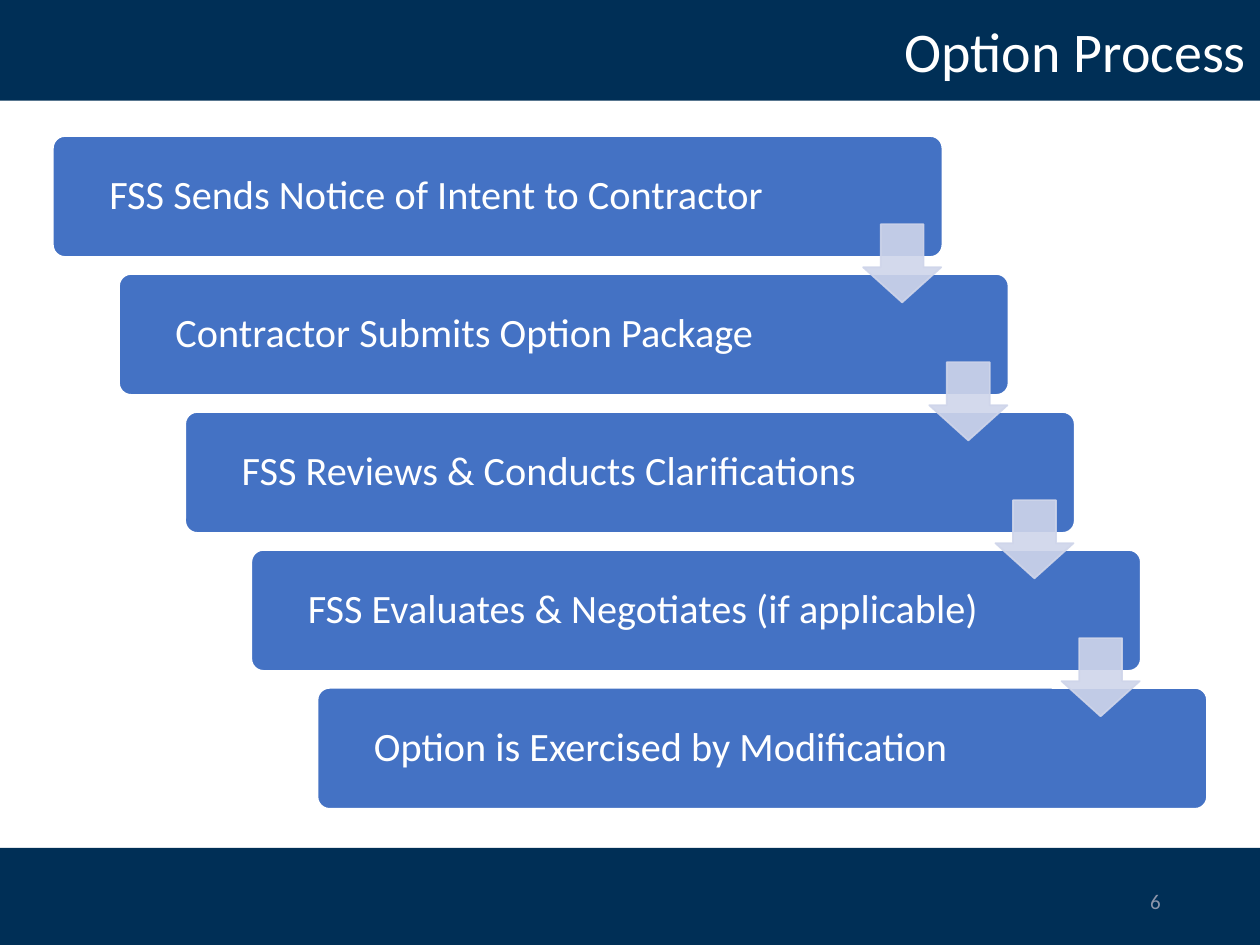
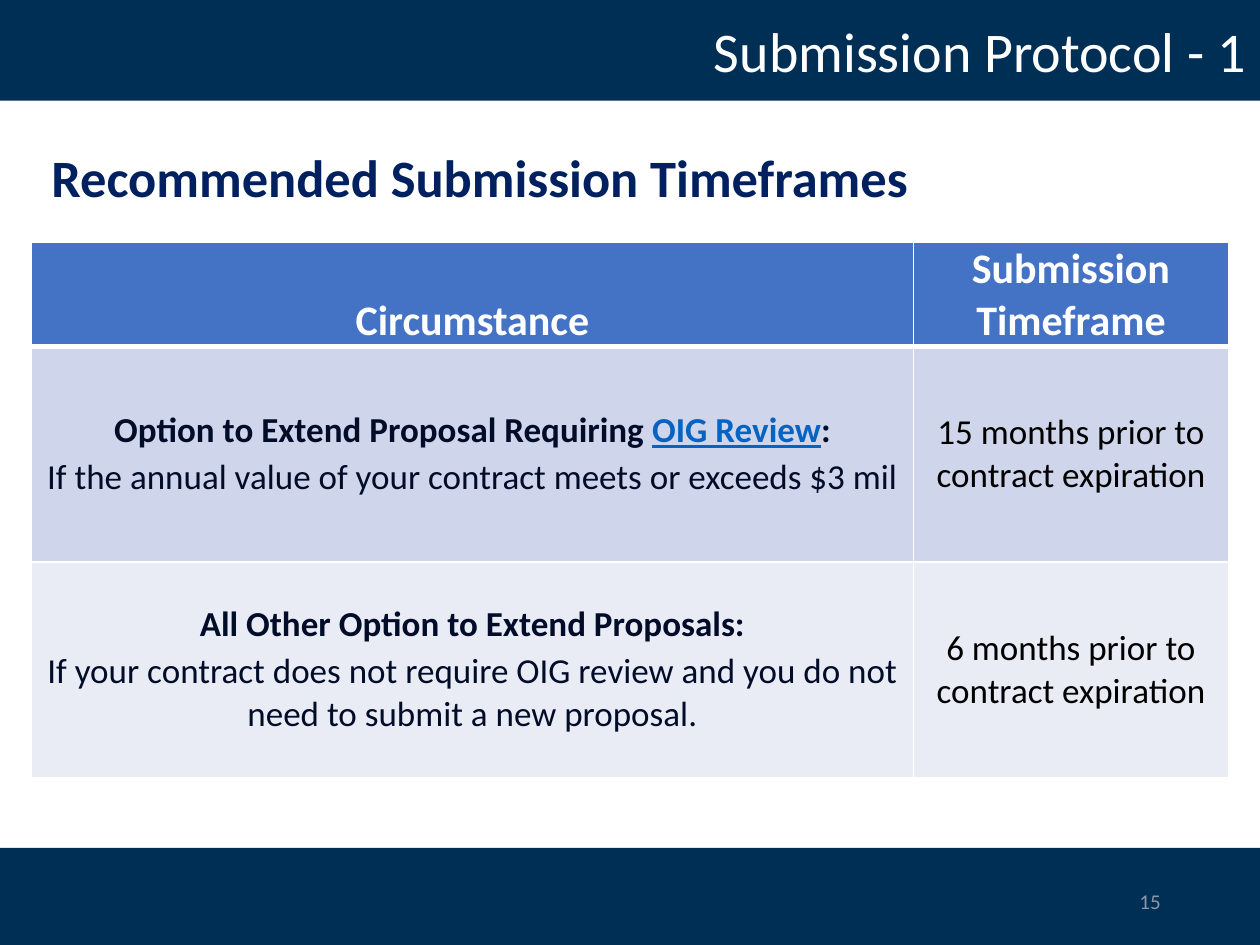
from lxml.etree import SubElement
from pptx import Presentation
from pptx.dml.color import RGBColor
from pptx.enum.shapes import MSO_SHAPE
from pptx.enum.text import MSO_ANCHOR, PP_ALIGN
from pptx.oxml import parse_xml
from pptx.oxml.ns import nsdecls, qn
from pptx.util import Inches, Pt

COLORS = {
    "band": "002F56", "white": "FFFFFF", "number": "8D95AA", "blue": "4472C4",
    "arrow": "CFD5EA", "row_dark": "CFD5EA", "row_light": "E9EBF5",
    "heading": "002060", "body": "010C29", "black": "000000", "link": "0563C1",
}
FONT = "Calibri"
TITLE = {"size": Pt(32)}
NUMBER = {"size": Pt(12)}
STEP = {"size": Pt(23)}
HEADING = {"size": Pt(30), "bold": True}
HEADER = {"size": Pt(24), "bold": True}
BODY = {"size": Pt(20), "bold": False}
LABEL = {"size": Pt(20), "bold": True}
LINK = {"size": Pt(20), "bold": True, "underline": True}

STEPS = [
    "FSS Sends Notice of Intent to Contractor",
    "Contractor Submits Option Package",
    "FSS Reviews & Conducts Clarifications",
    "FSS Evaluates & Negotiates (if applicable)",
    "Option is Exercised by Modification",
]
# Each cell is a list of paragraphs, each paragraph a list of (text, format, color)
TIMEFRAMES = [
    [[[("Circumstance", HEADER, "white")]],
     [[("Submission Timeframe", HEADER, "white")]]],
    [[[("Option to Extend Proposal Requiring ", LABEL, "body"),
       ("OIG Review", LINK, "link"), (":", LABEL, "body")],
      [("If the annual value of your contract meets or exceeds $3 mil",
        BODY, "body")]],
     [[("15 months prior to contract expiration", BODY, "black")]]],
    [[[("All Other Option to Extend Proposals:", LABEL, "body")],
      [("If your contract does not require OIG review and you do not "
        "need to submit a new proposal.", BODY, "body")]],
     [[("6 months prior to contract expiration", BODY, "black")]]],
]


def rgb(name):
    return RGBColor.from_string(COLORS[name])


def set_attrs(obj, values):
    for name, value in values.items():
        setattr(obj, name, value)


def add_run(p, text, fmt, color):
    r = p.add_run()
    r.text = text
    set_attrs(r.font, {"name": FONT, **fmt})
    r.font.color.rgb = rgb(color)


def write_line(tf, text, fmt, color, align=PP_ALIGN.LEFT, spacing=0.9):
    p = tf.paragraphs[0]
    set_attrs(p, {"alignment": align, "line_spacing": spacing})
    add_run(p, text, fmt, color)


def add_text(slide, box, text, fmt, color, anchor=MSO_ANCHOR.MIDDLE, **layout):
    tf = slide.shapes.add_textbox(*map(Inches, box)).text_frame
    set_attrs(tf, {"word_wrap": True, "vertical_anchor": anchor})
    write_line(tf, text, fmt, color, **layout)


def add_box(slide, kind, box, fill, line=None):
    sp = slide.shapes.add_shape(kind, *map(Inches, box))
    sp.shadow.inherit = False
    sp.fill.solid()
    sp.fill.fore_color.rgb = rgb(fill)
    if line:
        sp.line.color.rgb = rgb(line)
        sp.line.width = Pt(1)
    else:
        sp.line.fill.background()
    return sp


def add_slide(prs, title, number):
    """Add a blank slide with the shared bands, title and slide number."""
    slide = prs.slides.add_slide(prs.slide_layouts[6])
    for top in (6.73, 0):
        add_box(slide, MSO_SHAPE.RECTANGLE, (0, top, 10, 0.8), "band")
    add_text(slide, (2.58, 0.05, 7.41, 0.77), title, TITLE, "white",
             align=PP_ALIGN.RIGHT)
    add_text(slide, (7.06, 6.95, 2.25, 0.4), str(number), NUMBER, "number",
             align=PP_ALIGN.RIGHT, spacing=1.0)
    return slide


def add_step(slide, box, text):
    sp = add_box(slide, MSO_SHAPE.ROUNDED_RECTANGLE, box, "blue", "white")
    sp.adjustments[0] = 0.1
    tf = sp.text_frame
    set_attrs(tf, {"word_wrap": True, "vertical_anchor": MSO_ANCHOR.MIDDLE,
                   "margin_left": Inches(0.42), "margin_right": Inches(1.2)})
    write_line(tf, text, STEP, "white")


def add_down_arrow(slide, box):
    sp = add_box(slide, MSO_SHAPE.DOWN_ARROW, box, "arrow", "arrow")
    sp.adjustments[0], sp.adjustments[1] = 0.55, 0.45
    for color in sp._element.spPr.iter(qn("a:srgbClr")):
        SubElement(color, qn("a:alpha"), val="90000")


def add_staircase(slide, steps):
    """Place the steps on a falling diagonal, with an arrow between neighbours."""
    left, top, width, height = 0.42, 1.08, 7.06, 0.96
    dx = (2.52 - left) / (len(steps) - 1)
    dy = (5.46 - top) / (len(steps) - 1)
    for i, text in enumerate(steps):
        add_step(slide, (left + i * dx, top + i * dy, width, height), text)
    for i in range(len(steps) - 1):
        add_down_arrow(slide, (6.85 + i * dx, 1.78 + i * dy, 0.62, 0.62))


def set_borders(cell, widths):
    """Draw white borders; widths are points for left, right, top, bottom."""
    tcPr = cell._tc.get_or_add_tcPr()
    for i, (side, width) in enumerate(zip("LRTB", widths)):
        tcPr.insert(i, parse_xml(
            f'<a:ln{side} {nsdecls("a")} w="{Pt(width)}"><a:solidFill>'
            f'<a:srgbClr val="{COLORS["white"]}"/></a:solidFill></a:ln{side}>'))


def fill_cell(cell, paragraphs, fill, anchor, space_after):
    set_attrs(cell, {"vertical_anchor": anchor,
                     "margin_left": Inches(0.07), "margin_right": Inches(0.07),
                     "margin_top": 0, "margin_bottom": 0})
    cell.fill.solid()
    cell.fill.fore_color.rgb = rgb(fill)
    tf = cell.text_frame
    for i, runs in enumerate(paragraphs):
        p = tf.add_paragraph() if i else tf.paragraphs[0]
        set_attrs(p, {"alignment": PP_ALIGN.CENTER, "space_after": Pt(space_after)})
        for run in runs:
            add_run(p, *run)


def add_timeframe_table(slide, rows):
    table = slide.shapes.add_table(
        len(rows), 2, *map(Inches, (0.25, 1.92, 9.5, 4.25))).table
    for column, width in zip(table.columns, (7, 2.5)):
        column.width = Inches(width)
    for row, height in zip(table.rows, (0.83, 1.71, 1.71)):
        row.height = Inches(height)
    fills = ("blue", "row_dark", "row_light")
    for i, (cells, fill) in enumerate(zip(rows, fills)):
        anchor = MSO_ANCHOR.MIDDLE if i else MSO_ANCHOR.BOTTOM
        for j, paragraphs in enumerate(cells):
            cell = table.cell(i, j)
            fill_cell(cell, paragraphs, fill, anchor, 2 if i else 0)
            set_borders(cell, (1, 1, 3 if i == 1 else 1, 3 if i == 0 else 1))


def main():
    prs = Presentation()
    prs.slide_width, prs.slide_height = Inches(10), Inches(7.5)

    slide = add_slide(prs, "Option Process", 6)
    add_staircase(slide, STEPS)

    slide = add_slide(prs, "Submission Protocol - 1", 15)
    add_timeframe_table(slide, TIMEFRAMES)
    add_text(slide, (0.31, 1.16, 9, 0.6), "Recommended Submission Timeframes",
             HEADING, "heading", anchor=MSO_ANCHOR.TOP)

    prs.save("out.pptx")


if __name__ == "__main__":
    main()
